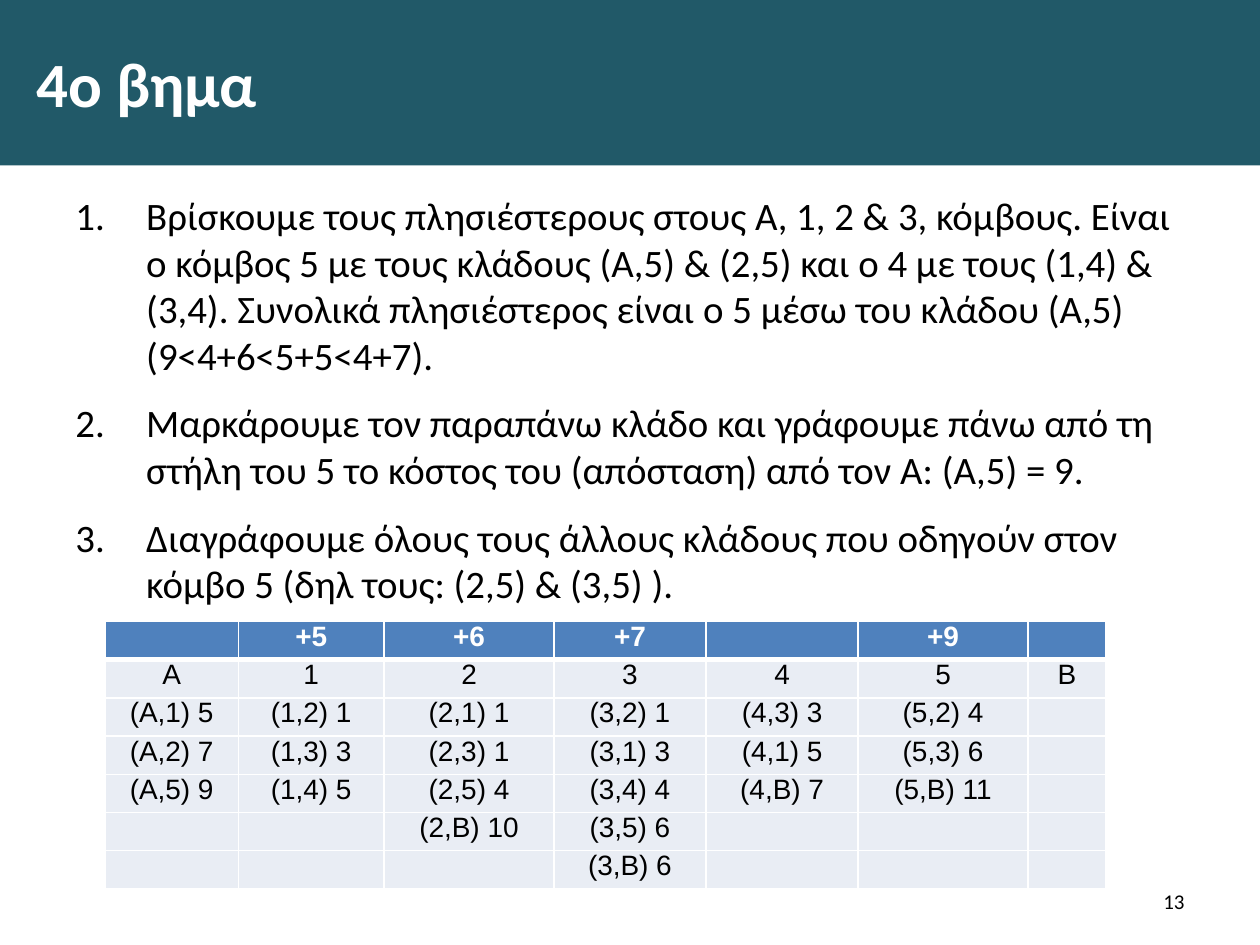
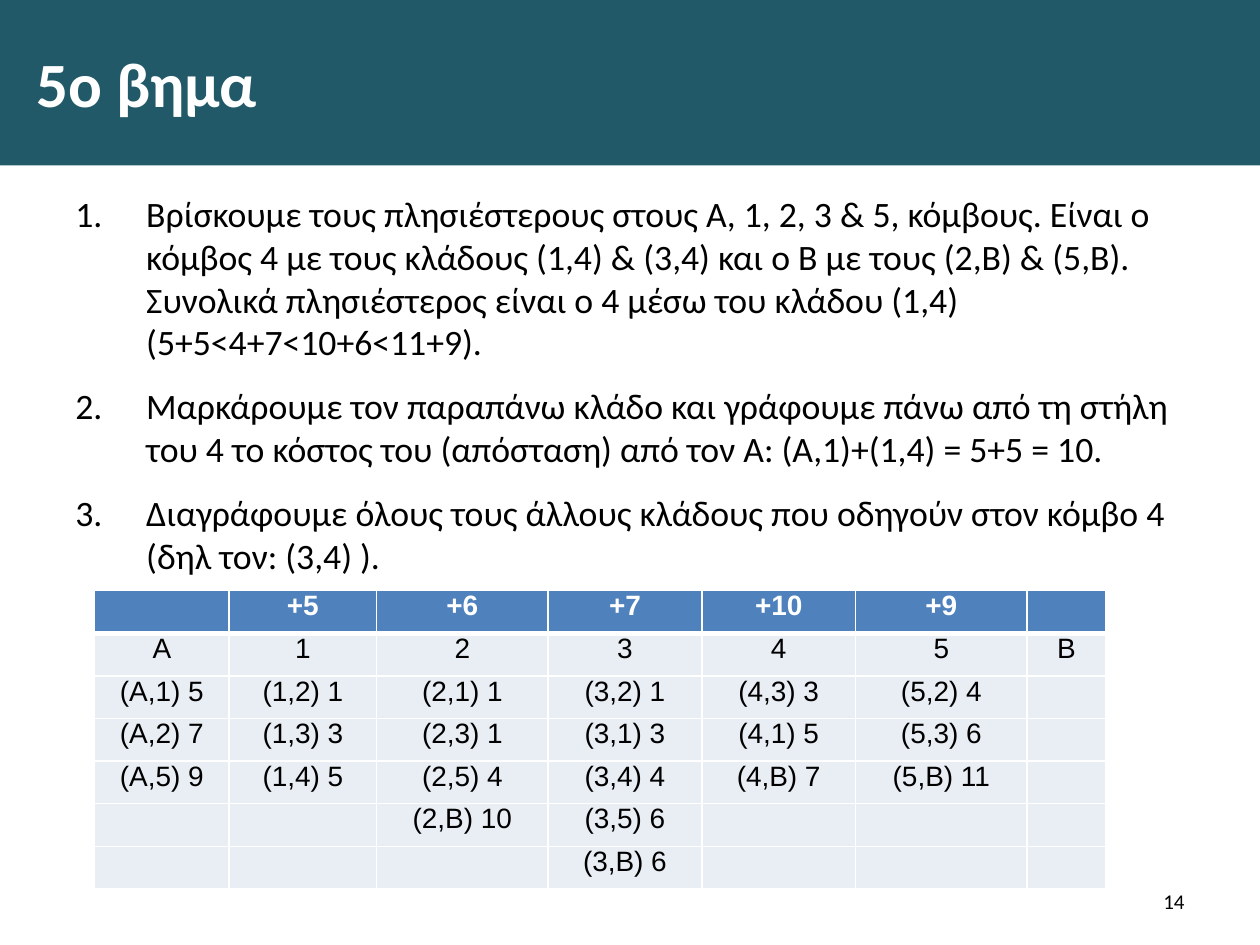
from dataclasses import dataclass

from lxml.etree import SubElement
from pptx import Presentation
from pptx.dml.color import RGBColor as Color
from pptx.enum.text import MSO_ANCHOR as Anchor, MSO_AUTO_SIZE as AutoSize, PP_ALIGN as Align
from pptx.oxml.ns import qn
from pptx.util import Pt


@dataclass(frozen=True)
class Theme:
    band: str = "215968"
    header: str = "4F81BD"
    cell: str = "E9EDF4"
    light: str = "FFFFFF"
    dark: str = "000000"
    text_font: str = "Calibri"
    table_font: str = "Arial"
    title_size: float = 36
    table_size: float = 16
    number_size: float = 12


THEME = Theme()
SLIDE_WIDTH, SLIDE_HEIGHT = 720, 540
BAND_HEIGHT = 94.5
TITLE_INDENT = 13.5
STEP_INDENT = 40.5
TABLE_RIGHT, TABLE_BOTTOM = 632, 508
COLUMN_SHARES = (1.06, 1.16, 1.35, 1.21, 1.21, 1.35, 0.62)

BRANCH_ROWS = (
    ("Α", "1", "2", "3", "4", "5", "Β"),
    ("(Α,1) 5", "(1,2) 1", "(2,1) 1", "(3,2) 1", "(4,3) 3", "(5,2) 4", ""),
    ("(Α,2) 7", "(1,3) 3", "(2,3) 1", "(3,1) 3", "(4,1) 5", "(5,3) 6", ""),
    ("(Α,5) 9", "(1,4) 5", "(2,5) 4", "(3,4) 4", "(4,Β) 7", "(5,Β) 11", ""),
    ("", "", "(2,Β) 10", "(3,5) 6", "", "", ""),
    ("", "", "", "(3,Β) 6", "", "", ""),
)

SLIDES = (
    dict(
        title="4ο βημα",
        number="13",
        step_size=22.2,
        steps=(
            "Βρίσκουμε τους πλησιέστερους στους Α, 1, 2 & 3, κόμβους. Είναι ο κόμβος 5 με "
            "τους κλάδους (Α,5) & (2,5) και ο 4 με τους (1,4) & (3,4). Συνολικά "
            "πλησιέστερος είναι ο 5 μέσω του κλάδου (Α,5) (9<4+6<5+5<4+7).",
            "Μαρκάρουμε τον παραπάνω κλάδο και γράφουμε πάνω από τη στήλη του 5 το κόστος "
            "του (απόσταση) από τον Α: (Α,5) = 9.",
            "Διαγράφουμε όλους τους άλλους κλάδους που οδηγούν στον κόμβο 5 "
            "(δηλ τους: (2,5) & (3,5) ).",
        ),
        costs=("", "+5", "+6", "+7", "", "+9", ""),
        table_left=60,
        table_top=355,
    ),
    dict(
        title="5ο βημα",
        number="14",
        step_size=20.4,
        steps=(
            "Βρίσκουμε τους πλησιέστερους στους Α, 1, 2, 3 & 5, κόμβους. Είναι ο κόμβος 4 "
            "με τους κλάδους (1,4) & (3,4) και ο Β με τους (2,Β) & (5,Β). Συνολικά "
            "πλησιέστερος είναι ο 4 μέσω του κλάδου (1,4) (5+5<4+7<10+6<11+9).",
            "Μαρκάρουμε τον παραπάνω κλάδο και γράφουμε πάνω από τη στήλη του 4 το κόστος "
            "του (απόσταση) από τον Α: (Α,1)+(1,4) = 5+5 = 10.",
            "Διαγράφουμε όλους τους άλλους κλάδους που οδηγούν στον κόμβο 4 "
            "(δηλ τον: (3,4) ).",
        ),
        costs=("", "+5", "+6", "+7", "+10", "+9", ""),
        table_left=54,
        table_top=337.5,
    ),
)


def paint(target, color):
    target.fill.solid()
    target.fill.fore_color.rgb = Color.from_string(color)


def add_run(paragraph, text, size, color, font=THEME.text_font, bold=False):
    run = paragraph.add_run()
    run.text = text
    run.font.name = font
    run.font.size = Pt(size)
    run.font.bold = bold
    run.font.color.rgb = Color.from_string(color)


def set_indent(paragraph, margin, first_line=0):
    properties = paragraph._p.get_or_add_pPr()
    properties.set("marL", str(Pt(margin)))
    properties.set("indent", str(Pt(first_line)))
    return properties


def add_text_frame(slide, left, top, width, height, anchor=Anchor.TOP):
    frame = slide.shapes.add_textbox(Pt(left), Pt(top), Pt(width), Pt(height)).text_frame
    frame.word_wrap = True
    frame.auto_size = AutoSize.NONE
    frame.vertical_anchor = anchor
    return frame


def set_title(slide, text):
    title = slide.shapes.title
    title.left, title.top = Pt(0), Pt(0)
    title.width, title.height = Pt(SLIDE_WIDTH), Pt(BAND_HEIGHT)
    paint(title, THEME.band)
    frame = title.text_frame
    frame.auto_size = AutoSize.NONE
    frame.vertical_anchor = Anchor.MIDDLE
    paragraph = frame.paragraphs[0]
    paragraph.alignment = Align.LEFT
    set_indent(paragraph, TITLE_INDENT)
    add_run(paragraph, text, THEME.title_size, THEME.light, bold=True)


def add_steps(slide, steps, size, bottom):
    top = 106
    frame = add_text_frame(slide, 36, top, 648, bottom - top)
    for index, step in enumerate(steps):
        paragraph = frame.add_paragraph() if index else frame.paragraphs[0]
        paragraph.space_before = Pt(12)
        properties = set_indent(paragraph, STEP_INDENT, -STEP_INDENT)
        SubElement(properties, qn("a:buFont"), typeface=THEME.text_font)
        SubElement(properties, qn("a:buAutoNum"), type="arabicPeriod")
        add_run(paragraph, step, size, THEME.dark)


def add_slide_number(slide, number):
    paragraph = add_text_frame(slide, 516, 500.5, 168, 28.5, Anchor.MIDDLE).paragraphs[0]
    paragraph.alignment = Align.RIGHT
    add_run(paragraph, number, THEME.number_size, THEME.dark)


def set_borders(cell, top, bottom):
    properties = cell._tc.get_or_add_tcPr()
    for side, width in (("L", 1), ("R", 1), ("T", top), ("B", bottom)):
        line = SubElement(properties, qn(f"a:ln{side}"), w=str(Pt(width)))
        SubElement(SubElement(line, qn("a:solidFill")), qn("a:srgbClr"), val=THEME.light)


def format_cell(cell, text, row):
    is_header = row == 0
    set_borders(cell, top=3 if row == 1 else 1, bottom=3 if is_header else 1)
    paint(cell, THEME.header if is_header else THEME.cell)
    cell.margin_left = cell.margin_right = Pt(5)
    cell.margin_top = cell.margin_bottom = Pt(0)
    paragraph = cell.text_frame.paragraphs[0]
    paragraph.alignment = Align.CENTER
    if text:
        color = THEME.light if is_header else THEME.dark
        add_run(paragraph, text, THEME.table_size, color, THEME.table_font, is_header)
    else:
        SubElement(paragraph._p, qn("a:endParaRPr"), sz=str(int(THEME.table_size * 100)))


def add_branch_table(slide, costs, left, top):
    rows = (costs, *BRANCH_ROWS)
    width, height = TABLE_RIGHT - left, TABLE_BOTTOM - top
    table = slide.shapes.add_table(
        len(rows), len(COLUMN_SHARES), Pt(left), Pt(top), Pt(width), Pt(height)
    ).table
    table.horz_banding = False
    for column, share in zip(table.columns, COLUMN_SHARES):
        column.width = Pt(width * share / sum(COLUMN_SHARES))
    for row, texts in enumerate(rows):
        table.rows[row].height = Pt(height / len(rows))
        for column, text in enumerate(texts):
            format_cell(table.cell(row, column), text, row)


def add_step_slide(presentation, content):
    slide = presentation.slides.add_slide(presentation.slide_layouts[5])
    set_title(slide, content["title"])
    add_steps(slide, content["steps"], content["step_size"], content["table_top"])
    add_slide_number(slide, content["number"])
    add_branch_table(slide, content["costs"], content["table_left"], content["table_top"])


def main():
    presentation = Presentation()
    presentation.slide_width, presentation.slide_height = Pt(SLIDE_WIDTH), Pt(SLIDE_HEIGHT)
    for content in SLIDES:
        add_step_slide(presentation, content)
    presentation.save("out.pptx")


if __name__ == "__main__":
    main()
